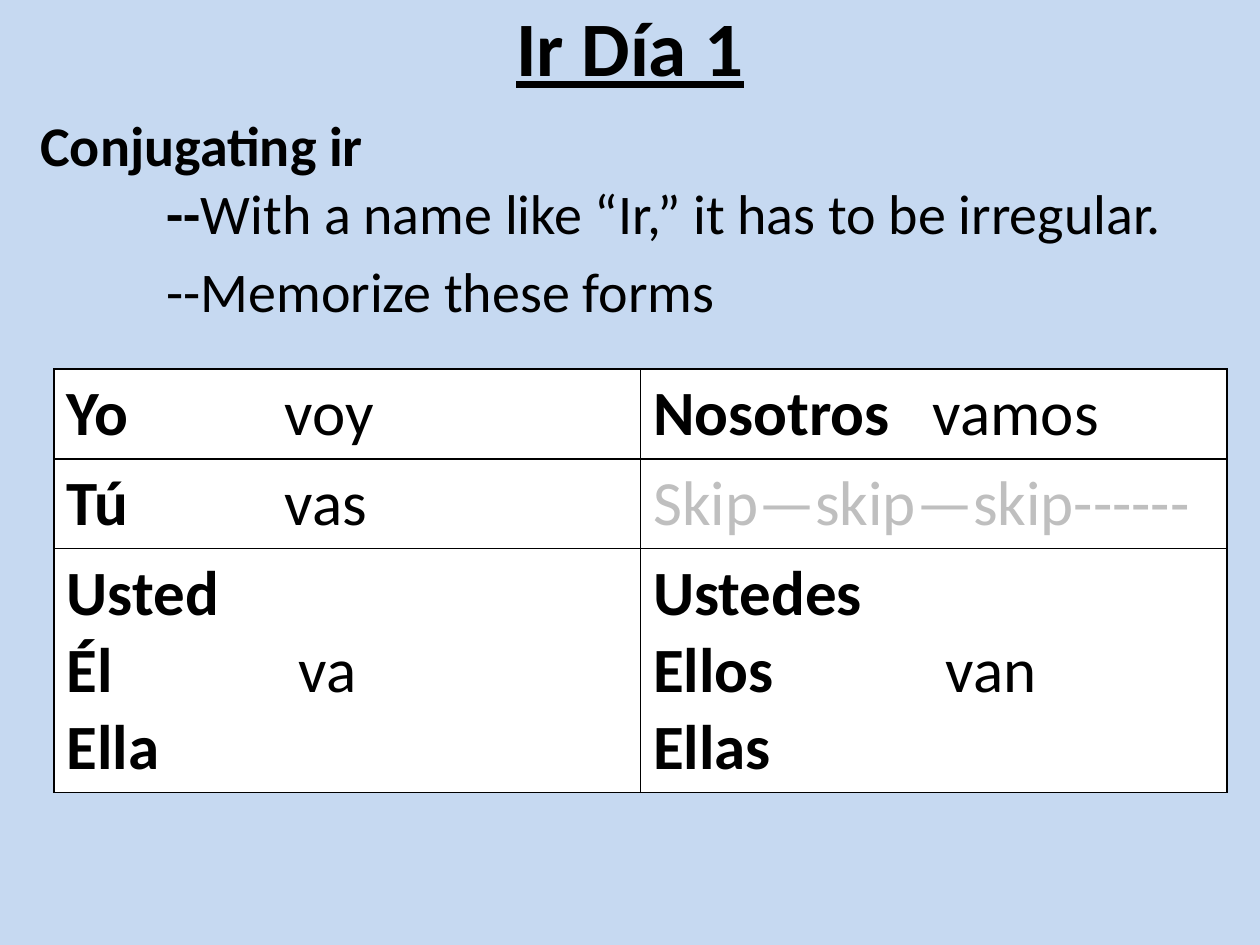
from lxml import etree
from pptx import Presentation
from pptx.dml.color import RGBColor
from pptx.enum import text
from pptx.oxml import ns
from pptx.util import Inches, Pt

BLACK, WHITE, GRAY, SKY = "000000", "FFFFFF", "BFBFBF", "C6D9F1"


def color(hex_string):
    return RGBColor.from_string(hex_string)


def place(sp, box):
    sp.left, sp.top, sp.width, sp.height = (Inches(v) for v in box)


def add_run(p, words, size, bold=False, ink=BLACK):
    r = p.add_run()
    r.text = words
    r.font.name, r.font.size, r.font.bold = "Calibri", Pt(size), bold
    r.font.color.rgb = color(ink)
    return r


def add_tab_stop(p, position):
    tabs = etree.SubElement(p._p.get_or_add_pPr(), ns.qn("a:tabLst"))
    etree.SubElement(tabs, ns.qn("a:tab"), pos=str(Inches(position)), algn="l")


def add_borders(cell):
    """Draw a thin black line on all four sides, ahead of the cell's fill."""
    props = cell._tc.get_or_add_tcPr()
    for i, side in enumerate(("lnL", "lnR", "lnT", "lnB")):
        line = etree.Element(ns.qn(f"a:{side}"), w=str(Pt(1)))
        fill = etree.SubElement(line, ns.qn("a:solidFill"))
        etree.SubElement(fill, ns.qn("a:srgbClr"), val=BLACK)
        props.insert(i, line)


def build_title(sp, box):
    place(sp, box)
    tf = sp.text_frame
    tf.vertical_anchor = text.MSO_ANCHOR.MIDDLE
    p = tf.paragraphs[0]
    p.alignment = text.PP_ALIGN.CENTER
    add_run(p, "Ir Día 1", 44, bold=True).font.underline = True


def build_notes(sp, box):
    place(sp, box)
    tf = sp.text_frame
    tf.vertical_anchor = text.MSO_ANCHOR.TOP
    intro, memorize = tf.paragraphs[0], tf.add_paragraph()
    for p in (intro, memorize):
        p.alignment = text.PP_ALIGN.LEFT
        p.space_before = Pt(6.4)
    # Two default tabs indent the dashed lines
    add_run(intro, "Conjugating ir", 32, bold=True)
    intro.add_line_break()
    add_run(intro, "\t\t--", 32, bold=True)
    add_run(intro, "With a name like “Ir,” it has to be irregular.", 32)
    add_run(memorize, "\t\t--Memorize these forms", 32)


def build_conjugation(slide, box):
    # Each line is (pronoun, verb form, tab position of the verb form)
    rows = [
        [[("Yo", "voy", 1.73)], [("Nosotros", "vamos", 2.22)]],
        [[("Tú", "vas", 1.73)], None],
        [[("Usted", "", 0), ("Él", "va", 1.84), ("Ella", "", 0)],
         [("Ustedes", "", 0), ("Ellos", "van", 2.32), ("Ellas", "", 0)]],
    ]
    table = slide.shapes.add_table(3, 2, *(Inches(v) for v in box)).table
    table.first_row = table.horz_banding = False
    for row, height in zip(table.rows, (0.7, 0.7, 1.9)):
        row.height = Inches(height)
    for i, row in enumerate(rows):
        for j, lines in enumerate(row):
            cell = table.cell(i, j)
            cell.fill.solid()
            cell.fill.fore_color.rgb = color(WHITE)
            add_borders(cell)
            tf = cell.text_frame
            if lines is None:
                add_run(tf.paragraphs[0], "Skip—skip—skip------", 36, ink=GRAY)
                continue
            for n, (pronoun, verb, tab) in enumerate(lines):
                p = tf.add_paragraph() if n else tf.paragraphs[0]
                add_run(p, pronoun, 36, bold=True)
                if verb:
                    add_tab_stop(p, tab)
                    add_run(p, "\t" + verb, 36)


def main():
    prs = Presentation()
    prs.slide_width, prs.slide_height = Inches(10), Inches(7.5)
    slide = prs.slides.add_slide(prs.slide_layouts[0])
    slide.background.fill.solid()
    slide.background.fill.fore_color.rgb = color(SKY)
    build_title(slide.shapes.title, (0, -0.31, 10, 1.35))
    build_notes(slide.placeholders[1], (0.22, 0.83, 9.78, 2.1))
    build_conjugation(slide, (0.43, 2.93, 9.31, 3.3))
    prs.save("out.pptx")


if __name__ == "__main__":
    main()
